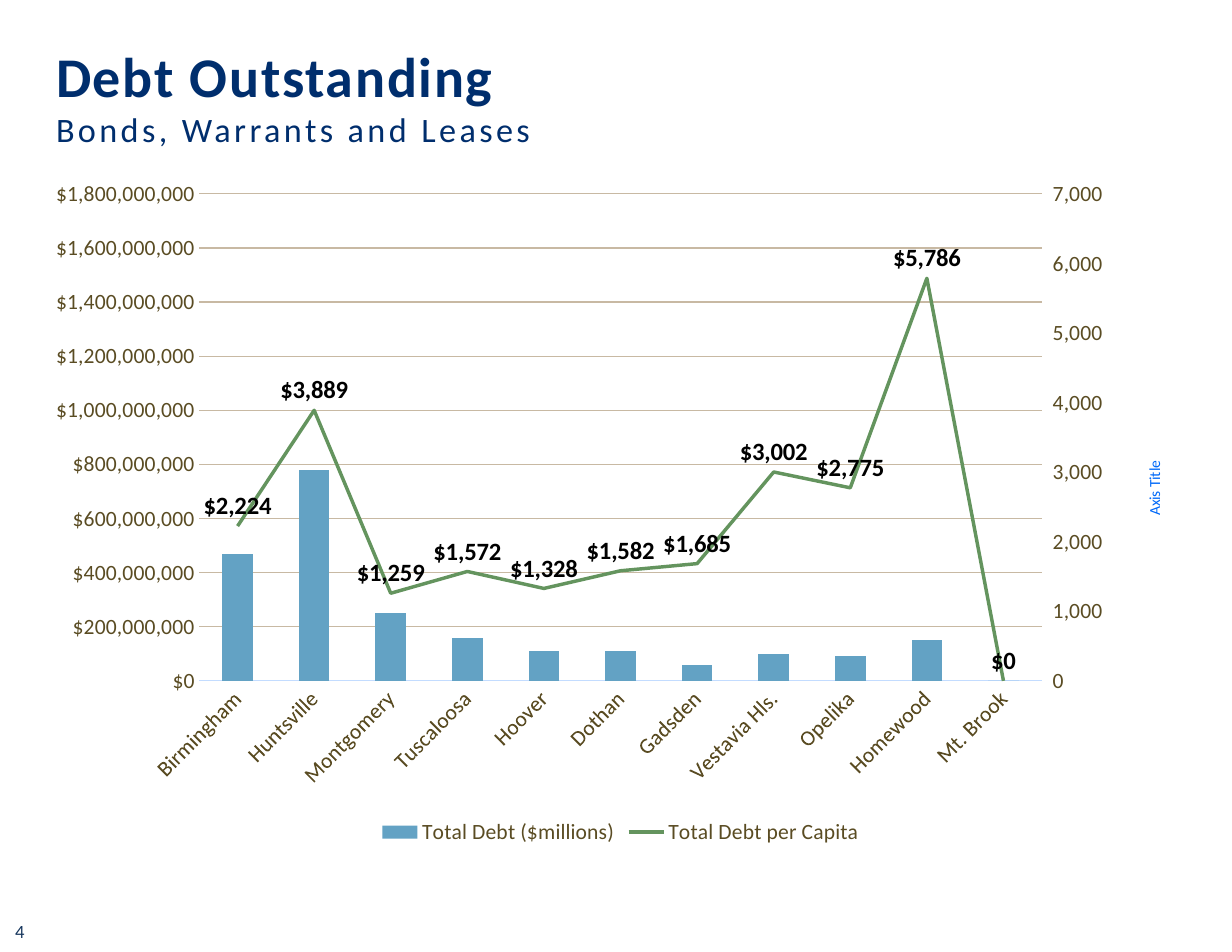
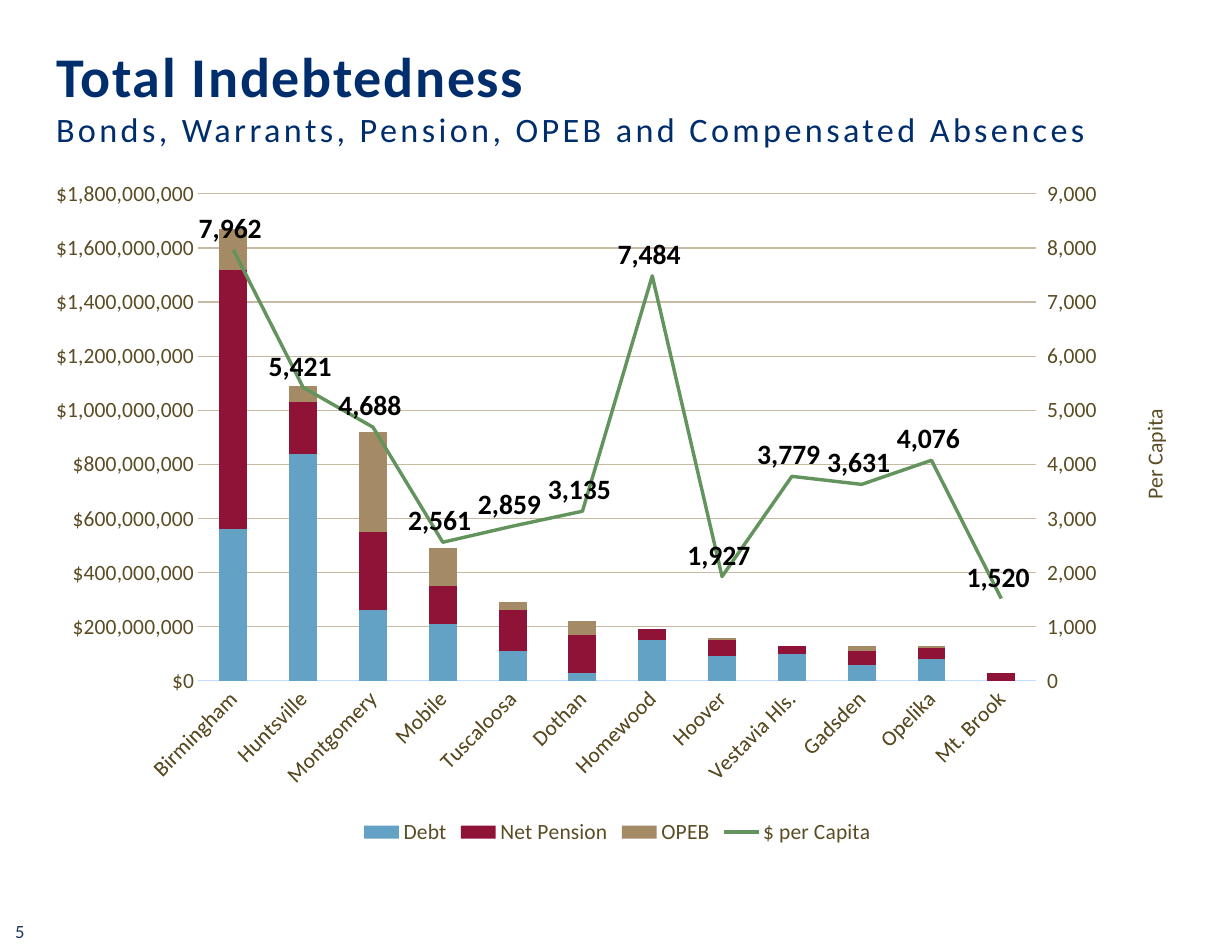
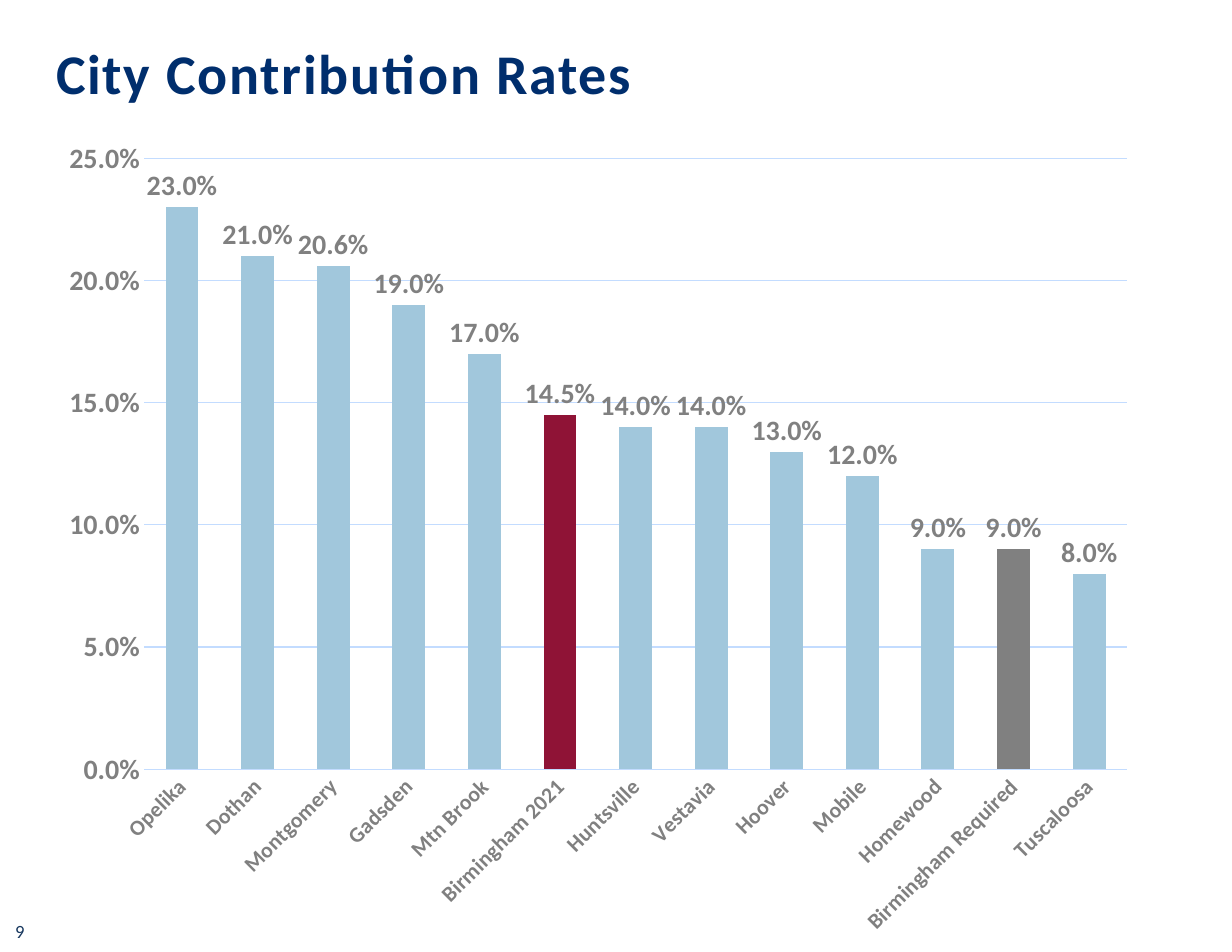
import copy

import pptx
import pptx.chart.axis
import pptx.chart.data
import pptx.dml.color
import pptx.enum.chart
import pptx.enum.text
import pptx.oxml
import pptx.oxml.ns
import pptx.util

Inches = pptx.util.Inches
Pt = pptx.util.Pt
RGB = pptx.dml.color.RGBColor.from_string
qn = pptx.oxml.ns.qn
ChartType = pptx.enum.chart.XL_CHART_TYPE
LabelPosition = pptx.enum.chart.XL_LABEL_POSITION

FONT = "Calibri"
COLORS = {
    "navy": "002E6D", "number": "17375E", "brown": "5A4C23", "bright": "0069F9",
    "blue": "63A2C4", "red": "8F1336", "tan": "A48A65", "green": "64945E",
    "pale": "A1C7DC", "gray": "808080", "black": "000000",
    "axis": "C3DCFF", "grid": "C8B9A3",
}
MILLION = 1_000_000
DOLLARS = '"$"#,##0'


def write_text(frame, text, size=12, color="navy", bold=False, spacing=0):
    """Add a formatted run to the first paragraph of a text frame."""
    para = frame.paragraphs[0]
    span = para.add_run()
    span.text = text
    span.font.name = FONT
    span.font.size = Pt(size)
    span.font.bold = bold
    span.font.color.rgb = RGB(COLORS[color])
    if spacing:
        span.font._element.set("spc", str(round(spacing * 100)))
    return para


def place(parent, **position):
    """Fix the place of a chart part, as fractions of the chart."""
    layout = parent.find(qn("c:layout"))
    if layout is None:
        layout = pptx.oxml.parse_xml(f'<c:layout {pptx.oxml.ns.nsdecls("c")}/>')
        parent.insert(0, layout)
    manual = layout.makeelement(qn("c:manualLayout"), {})
    layout.append(manual)
    settings = {"xMode": "edge", "yMode": "edge", **position}
    if "w" in position:
        settings = {"layoutTarget": "inner", **settings}
    for name, value in settings.items():
        manual.append(manual.makeelement(qn(f"c:{name}"), {"val": str(value)}))


# What each page shows
debt_style = dict(
    type_size=14, value_size=14, text_color="brown", bold=False, grid="grid",
    area=(0.5, 1.55, 9.99, 6.04), plot=dict(x=0.12, y=0.03, w=0.76, h=0.72),
    top=1800 * MILLION, step=200 * MILLION, format=DOLLARS, gap=150, title_top=0.43,
)
pages = [
    dict(
        debt_style, number=4, title="Debt Outstanding",
        subtitle="Bonds, Warrants and Leases", kind=ChartType.COLUMN_CLUSTERED,
        cities=["Birmingham", "Huntsville", "Montgomery", "Tuscaloosa", "Hoover", "Dothan",
                "Gadsden", "Vestavia Hls.", "Opelika", "Homewood", "Mt. Brook"],
        columns=[("Total Debt ($millions)", "blue",
                  [470, 780, 250, 160, 110, 110, 60, 100, 90, 150, 0])],
        line=("Total Debt per Capita",
              [2224, 3889, 1259, 1572, 1328, 1582, 1685, 3002, 2775, 5786, 0]),
        line_top=7000, label_size=16, label_format=DOLLARS,
        axis_title=dict(text="Axis Title", size=10, color="bright"), axis_title_y=0.42,
    ),
    dict(
        debt_style, number=5, title="Total Indebtedness",
        subtitle="Bonds, Warrants, Pension, OPEB and Compensated Absences",
        kind=ChartType.COLUMN_STACKED,
        cities=["Birmingham", "Huntsville", "Montgomery", "Mobile", "Tuscaloosa", "Dothan",
                "Homewood", "Hoover", "Vestavia Hls.", "Gadsden", "Opelika", "Mt. Brook"],
        columns=[
            ("Debt", "blue", [560, 840, 260, 210, 110, 30, 150, 90, 100, 60, 80, 0]),
            ("Net Pension", "red", [960, 190, 290, 140, 150, 140, 40, 60, 30, 50, 40, 30]),
            ("OPEB", "tan", [150, 60, 370, 140, 30, 50, 0, 10, 0, 20, 10, 0]),
        ],
        line=("$ per Capita",
              [7962, 5421, 4688, 2561, 2859, 3135, 7484, 1927, 3779, 3631, 4076, 1520]),
        line_top=9000, label_size=18, label_format=r"#,##0_);\(#,##0\)",
        axis_title=dict(text="Per Capita", size=14, color="brown"), axis_title_y=0.34,
    ),
    dict(
        number=9, title="City Contribution Rates", title_top=0.4, subtitle=None,
        kind=ChartType.COLUMN_CLUSTERED, type_size=14, value_size=18, text_color="gray",
        bold=True, grid="axis", area=(0.4, 1.12, 9.86, 7.37),
        plot=dict(x=0.09, y=0.04, w=0.89, h=0.74),
        top=0.25, step=0.05, format="0.0%", gap=130,
        cities=["Opelika", "Dothan", "Montgomery", "Gadsden", "Mtn Brook", "Birmingham 2021",
                "Huntsville", "Vestavia", "Hoover", "Mobile", "Homewood",
                "Birmingham Required", "Tuscaloosa"],
        columns=[("Series 1", "pale", [0.23, 0.21, 0.206, 0.19, 0.17, 0.145, 0.14, 0.14,
                                       0.13, 0.12, 0.09, 0.09, 0.08])],
        line=None, highlights={"Birmingham 2021": "red", "Birmingham Required": "gray"},
        label_size=18, label_format="0.0%",
    ),
]

deck = pptx.Presentation()
deck.slide_width = Inches(11)
deck.slide_height = Inches(8.5)

for page in pages:
    slide = deck.slides.add_slide(deck.slide_layouts[1 if page["subtitle"] else 5])

    # Page number
    box = slide.shapes.add_textbox(Inches(0), Inches(8.16), Inches(0.53), Inches(0.3))
    box.text_frame.word_wrap = True
    box.text_frame.vertical_anchor = pptx.enum.text.MSO_ANCHOR.MIDDLE
    write_text(box.text_frame, f" {page['number']}", color="number")

    # Title
    title = slide.shapes.title
    title.left, title.top = Inches(0.5), Inches(page["title_top"])
    title.width, title.height = Inches(9.99), Inches(0.48)
    frame = title.text_frame
    frame.margin_left = frame.margin_right = frame.margin_top = frame.margin_bottom = 0
    frame.word_wrap = False
    frame.auto_size = pptx.enum.text.MSO_AUTO_SIZE.NONE
    frame.vertical_anchor = pptx.enum.text.MSO_ANCHOR.MIDDLE
    para = write_text(frame, page["title"], size=36, bold=True, spacing=1.1)
    para.alignment = pptx.enum.text.PP_ALIGN.LEFT

    # Subtitle
    if page["subtitle"]:
        body = slide.placeholders[1]
        body.left, body.top = Inches(0.5), Inches(0.92)
        body.width, body.height = Inches(9.99), Inches(0.57)
        frame = body.text_frame
        frame.margin_left = 0
        frame.auto_size = pptx.enum.text.MSO_AUTO_SIZE.NONE
        para = write_text(frame, page["subtitle"], size=22, spacing=2.2)
        para.space_before = Pt(0)
        properties = para._p.get_or_add_pPr()
        properties.set("marL", str(Inches(0.25)))
        properties.set("indent", str(-Inches(0.25)))
        properties.append(properties.makeelement(qn("a:buNone"), {}))

    # Chart data
    chart_data = pptx.chart.data.CategoryChartData(number_format=page["format"])
    chart_data.categories = page["cities"]
    scale = MILLION if page["line"] else 1
    for name, color, values in page["columns"]:
        chart_data.add_series(name, [value * scale for value in values])
    if page["line"]:
        chart_data.add_series(*page["line"], number_format="#,##0")
    area = [Inches(length) for length in page["area"]]
    chart = slide.shapes.add_chart(page["kind"], *area, chart_data).chart
    chart.has_title = False
    chart.has_legend = bool(page["line"])
    plot_area = chart._chartSpace.find(".//" + qn("c:plotArea"))
    place(plot_area, **page["plot"])

    # Columns
    columns = chart.plots[0]
    columns.vary_by_categories = False
    columns.gap_width = page["gap"]
    for series, (name, color, values) in zip(columns.series, page["columns"]):
        series.format.fill.solid()
        series.format.fill.fore_color.rgb = RGB(COLORS[color])

    # Axes
    city_axis, value_axis = chart.category_axis, chart.value_axis
    for axis in (city_axis, value_axis):
        axis.major_tick_mark = pptx.enum.chart.XL_TICK_MARK.NONE
        axis.minor_tick_mark = pptx.enum.chart.XL_TICK_MARK.NONE
    value_axis.minimum_scale = 0
    value_axis.maximum_scale = page["top"]
    value_axis.major_unit = page["step"]
    value_axis.has_major_gridlines = True
    value_axis.tick_labels.number_format = page["format"]
    value_axis.tick_labels.number_format_is_linked = False
    value_axis.format.line.fill.background()
    for line, color in ((value_axis.major_gridlines.format.line, page["grid"]),
                        (city_axis.format.line, "axis")):
        line.color.rgb = RGB(COLORS[color])
        line.width = Pt(0.75)

    text_color, bold = page["text_color"], page["bold"]
    fonts = [
        (chart.font, 10, "navy", False),
        (city_axis.tick_labels.font, page["type_size"], text_color, bold),
        (value_axis.tick_labels.font, page["value_size"], text_color, bold),
    ]
    if chart.has_legend:
        chart.legend.position = pptx.enum.chart.XL_LEGEND_POSITION.BOTTOM
        chart.legend.include_in_layout = False
        fonts.append((chart.legend.font, 14, text_color, False))
    city_element = plot_area.find(qn("c:catAx"))
    city_element.find(qn("c:txPr")).find(qn("a:bodyPr")).set("rot", "-2700000")

    if page["line"]:
        # Line on its own axes, taken from the last column series
        line_series = columns.series[len(page["columns"])]._element
        for flag in line_series.findall(qn("c:invertIfNegative")):
            line_series.remove(flag)
        line_chart = pptx.oxml.parse_xml(
            f'<c:lineChart {pptx.oxml.ns.nsdecls("c")}><c:grouping val="standard"/>'
            '<c:varyColors val="0"/><c:marker val="1"/>'
            '<c:axId val="5001"/><c:axId val="5002"/></c:lineChart>')
        line_chart.insert(2, line_series)
        city_element.addprevious(line_chart)
        series = chart.plots[1].series[0]
        series.smooth = False
        series.marker.style = pptx.enum.chart.XL_MARKER_STYLE.NONE
        series.format.line.color.rgb = RGB(COLORS["green"])
        series.format.line.width = Pt(2.25)
        label_color, label_position = "black", LabelPosition.ABOVE
    else:
        columns.overlap = -23
        series = columns.series[0]
        for city, color in page["highlights"].items():
            fill = series.points[page["cities"].index(city)].format.fill
            fill.solid()
            fill.fore_color.rgb = RGB(COLORS[color])
        label_color, label_position = "gray", LabelPosition.OUTSIDE_END

    # Value labels
    labels = series.data_labels
    labels.show_value = True
    labels.number_format = page["label_format"]
    labels.number_format_is_linked = False
    labels.position = label_position
    fonts.append((labels.font, page["label_size"], label_color, True))
    for font, size, color, bold in fonts:
        font.name = FONT
        font.size = Pt(size)
        font.bold = bold
        font.color.rgb = RGB(COLORS[color])

    # Right axis, made from the formatted left one
    if page["line"]:
        value_element = plot_area.find(qn("c:valAx"))
        right_element = copy.deepcopy(value_element)
        hidden_element = copy.deepcopy(city_element)
        value_element.addnext(right_element)
        right_element.addnext(hidden_element)
        for element, own, other in ((right_element, "5002", "5001"),
                                    (hidden_element, "5001", "5002")):
            element.find(qn("c:axId")).set("val", own)
            element.find(qn("c:crossAx")).set("val", other)
        right_element.find(qn("c:axPos")).set("val", "r")
        right_element.find(qn("c:crosses")).set("val", "max")
        pptx.chart.axis.CategoryAxis(hidden_element).visible = False

        right_axis = pptx.chart.axis.ValueAxis(right_element)
        right_axis.has_major_gridlines = False
        right_axis.maximum_scale = page["line_top"]
        right_axis.major_unit = 1000
        right_axis.major_tick_mark = pptx.enum.chart.XL_TICK_MARK.OUTSIDE
        right_axis.tick_labels.number_format = "#,##0"
        frame = right_axis.axis_title.text_frame
        write_text(frame, **page["axis_title"])
        frame._txBody.find(qn("a:bodyPr")).set("rot", "-5400000")
        place(right_element.find(qn("c:title")), x=0.97, y=page["axis_title_y"])

deck.save("out.pptx")
